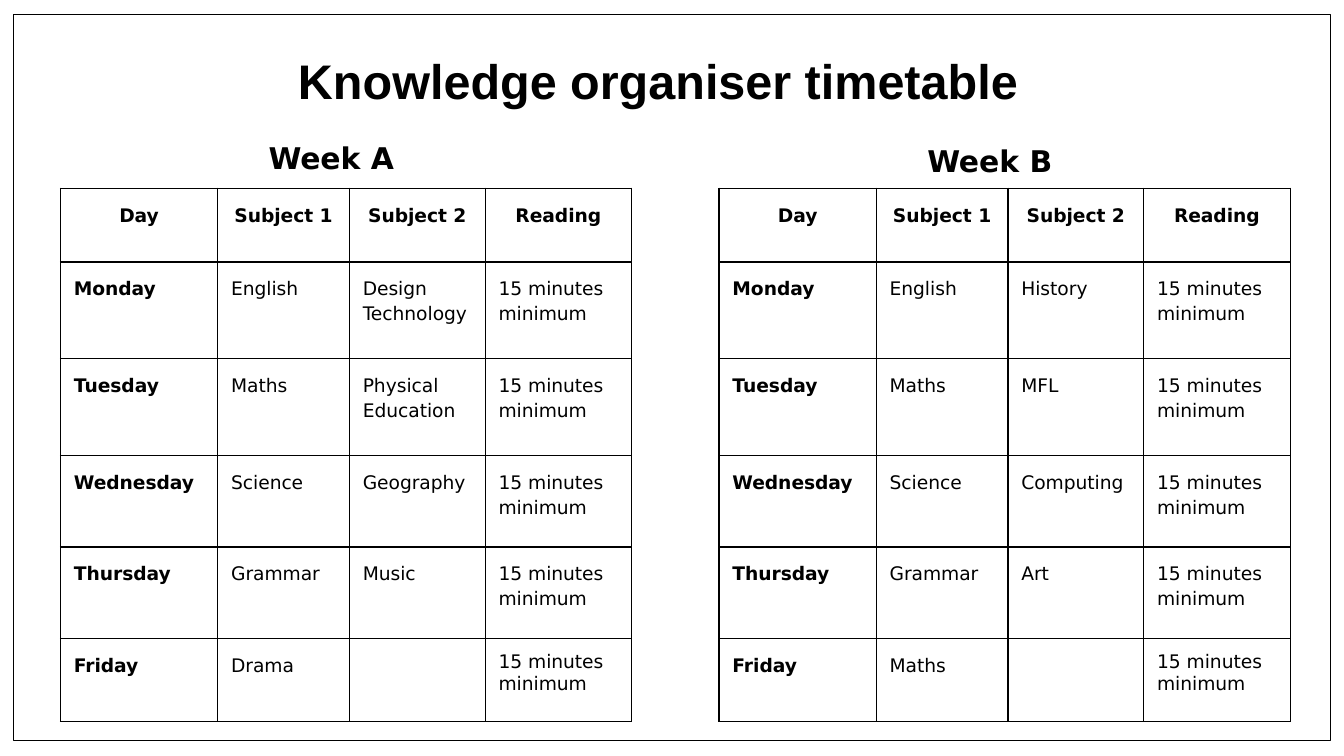
"""Build the two-week knowledge organiser timetable slide."""
from dataclasses import dataclass

import lxml.etree
import pptx
import pptx.dml.color
import pptx.enum.shapes
import pptx.enum.text
import pptx.oxml.ns
import pptx.util

Inches = pptx.util.Inches
Pt = pptx.util.Pt
CENTER = pptx.enum.text.PP_ALIGN.CENTER
LEFT = pptx.enum.text.PP_ALIGN.LEFT


@dataclass(frozen=True)
class Theme:
    ink: str = "000000"
    title_font: str = "Arial"
    body_font: str = "DejaVu Sans"
    title_size: int = 26
    week_size: int = 16
    cell_size: int = 10
    rule_width: float = 0.75
    line_spacing: float = 1.15
    inset: float = 0.1


@dataclass(frozen=True)
class Week:
    heading: str
    heading_left: float
    heading_top: float
    table_left: float
    subjects: tuple[tuple[str, str], ...]


THEME = Theme()
HEADER = ("Day", "Subject 1", "Subject 2", "Reading")
DAYS = ("Monday", "Tuesday", "Wednesday", "Thursday", "Friday")
READING = "15 minutes\nminimum"
COLUMN_WIDTHS = (1.17, 0.98, 1.01, 1.09)
ROW_HEIGHTS = (0.55, 0.72, 0.72, 0.68, 0.68, 0.62)
TABLE_TOP = 1.4
WEEKS = (
    Week("Week A", 1.18, 0.99, 0.45, (
        ("English", "Design Technology"), ("Maths", "Physical Education"),
        ("Science", "Geography"), ("Grammar", "Music"), ("Drama", ""))),
    Week("Week B", 6.08, 1.01, 5.35, (
        ("English", "History"), ("Maths", "MFL"),
        ("Science", "Computing"), ("Grammar", "Art"), ("Maths", ""))),
)


def write(paragraph, text: str, size: int, font: str, bold: bool, align, spacing: float) -> None:
    """Fill one paragraph and format its runs."""
    paragraph.text = text
    paragraph.alignment = align
    paragraph.line_spacing = spacing
    for run in paragraph.runs:
        run.font.size = Pt(size)
        run.font.name = font
        run.font.bold = bold
        run.font.color.rgb = pptx.dml.color.RGBColor.from_string(THEME.ink)


def rule_cell(cell) -> None:
    """Draw a thin rule on all four sides of a cell."""
    properties = cell._tc.get_or_add_tcPr()
    qn = pptx.oxml.ns.qn
    for side in ("a:lnL", "a:lnR", "a:lnT", "a:lnB"):
        rule = lxml.etree.SubElement(properties, qn(side), w=str(Pt(THEME.rule_width)))
        fill = lxml.etree.SubElement(rule, qn("a:solidFill"))
        lxml.etree.SubElement(fill, qn("a:srgbClr"), val=THEME.ink)


def add_frame(slide) -> None:
    """Outline the slide."""
    frame = slide.shapes.add_shape(
        pptx.enum.shapes.MSO_SHAPE.RECTANGLE,
        Inches(0.1), Inches(0.11), Inches(9.8), Inches(5.4))
    frame.shadow.inherit = False
    frame.fill.background()
    frame.line.color.rgb = pptx.dml.color.RGBColor.from_string(THEME.ink)
    frame.line.width = Pt(THEME.rule_width)


def add_title(slide, text: str) -> None:
    """Place the slide title, set slightly left of centre."""
    title = slide.shapes.title
    title.left, title.top = Inches(2.1), Inches(0.25)
    title.width, title.height = Inches(5.8), Inches(0.62)
    body = title.text_frame
    body.word_wrap = True
    body.auto_size = pptx.enum.text.MSO_AUTO_SIZE.NONE
    body.vertical_anchor = pptx.enum.text.MSO_ANCHOR.MIDDLE
    body.margin_left = body.margin_top = body.margin_bottom = Inches(THEME.inset)
    body.margin_right = Inches(0.3)
    write(body.paragraphs[0], text, THEME.title_size, THEME.title_font,
          True, CENTER, THEME.line_spacing)


def add_timetable(slide, week: Week) -> None:
    """Draw the timetable of one week."""
    lessons = [(day, *pair, READING) for day, pair in zip(DAYS, week.subjects)]
    rows = [HEADER, *lessons]
    table = slide.shapes.add_table(
        len(rows), len(HEADER), Inches(week.table_left), Inches(TABLE_TOP),
        Inches(sum(COLUMN_WIDTHS)), Inches(sum(ROW_HEIGHTS))).table
    table.first_row = table.horz_banding = False
    for column, width in zip(table.columns, COLUMN_WIDTHS):
        column.width = Inches(width)
    for row, height in zip(table.rows, ROW_HEIGHTS):
        row.height = Inches(height)
    for r, texts in enumerate(rows):
        for c, text in enumerate(texts):
            cell = table.cell(r, c)
            rule_cell(cell)
            cell.fill.background()
            cell.margin_left = cell.margin_right = Inches(THEME.inset)
            cell.margin_top = cell.margin_bottom = Inches(THEME.inset)
            last_reading = r == len(DAYS) and text == READING
            write(cell.text_frame.paragraphs[0], text, THEME.cell_size, THEME.body_font,
                  r == 0 or c == 0, CENTER if r == 0 else LEFT,
                  1.0 if last_reading else THEME.line_spacing)


def add_heading(slide, week: Week) -> None:
    """Write the name of a week above its timetable."""
    heading = slide.shapes.add_textbox(
        Inches(week.heading_left), Inches(week.heading_top), Inches(2.57), Inches(0.37))
    heading.text_frame.word_wrap = True
    heading.text_frame.auto_size = pptx.enum.text.MSO_AUTO_SIZE.SHAPE_TO_FIT_TEXT
    write(heading.text_frame.paragraphs[0], week.heading, THEME.week_size,
          THEME.body_font, True, CENTER, 1.0)


def main() -> None:
    """Build and save the presentation."""
    presentation = pptx.Presentation()
    presentation.slide_width = Inches(10)
    presentation.slide_height = Inches(10 * 9 / 16)
    slide = presentation.slides.add_slide(presentation.slide_layouts[5])
    add_frame(slide)
    add_title(slide, "Knowledge organiser timetable")
    for week in WEEKS:
        add_timetable(slide, week)
    for week in WEEKS:
        add_heading(slide, week)
    presentation.save("out.pptx")


if __name__ == "__main__":
    main()
